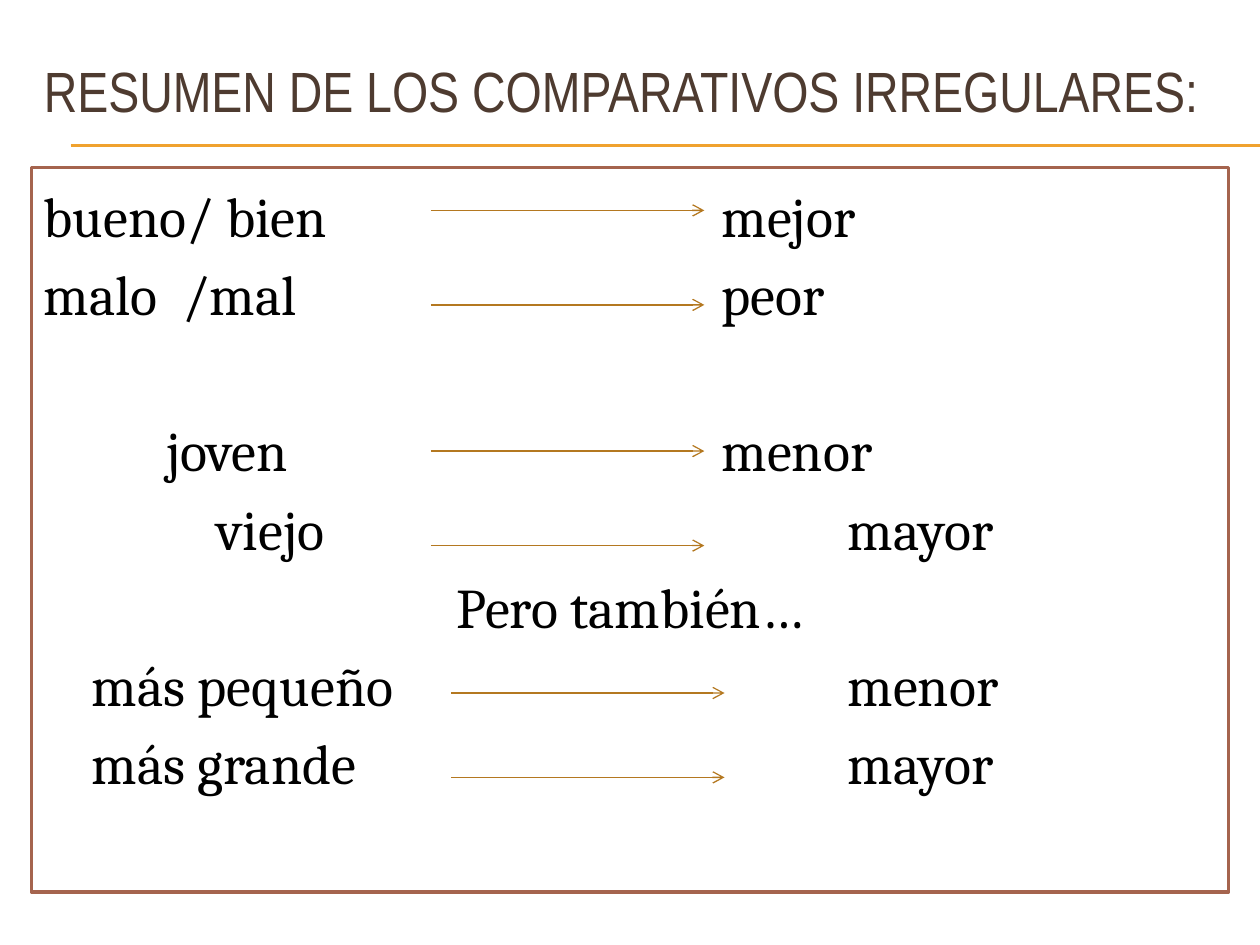
from lxml import etree
from pptx import Presentation
from pptx import util as u
from pptx.dml.color import RGBColor
from pptx.enum import shapes, text
from pptx.oxml.ns import qn

# Content
TITLE = "RESUMEN DE LOS COMPARATIVOS IRREGULARES:"
NOTE = "Pero también…"
# adjective, comparative, adjective tab, comparative tab, arrow start, arrow y
PAIRS = [
    ("bueno/ bien", "mejor", 0, 5.38, 3.42, 1.67),
    ("malo  /mal", "peor", 0, 5.38, 3.42, 2.42),
    ("joven", "menor", 0.97, 5.38, 3.42, 3.58),
    ("viejo", "mayor", 1.37, 6.38, 3.42, 4.33),
    ("más pequeño", "menor", 0.38, 6.38, 3.58, 5.5),
    ("más grande", "mayor", 0.38, 6.38, 3.58, 6.17),
]
GROUP_START, NOTE_AFTER = 2, 3

BROWN = RGBColor(0x4E, 0x3B, 0x30)
BLACK = RGBColor(0, 0, 0)
WHITE = RGBColor(255, 255, 255)
RUST = RGBColor(0xA5, 0x64, 0x4E)
GOLD = RGBColor(0xF0, 0xA2, 0x2E)
OCHRE = RGBColor(0xB4, 0x78, 0x20)
MARGIN, ARROW_LENGTH, PITCH = 0.25, 2.17, u.Pt(44.7)

prs = Presentation()
prs.slide_width, prs.slide_height = u.Inches(10), u.Inches(7.5)
slide = prs.slides.add_slide(prs.slide_layouts[6])


def add_line(left, right, y, color, arrow=False):
    line = slide.shapes.add_connector(
        shapes.MSO_CONNECTOR.STRAIGHT, *map(u.Inches, (left, y, right, y)))
    line.line.color.rgb = color
    line.line.width = u.Pt(0.75)
    if arrow:
        etree.SubElement(line.line._get_or_add_ln(), qn("a:tailEnd"), type="arrow")
    etree.SubElement(line._element.spPr, qn("a:effectLst"))


def set_font(paragraph, name, size, color):
    font = paragraph.font
    font.name, font.size, font.color.rgb = name, u.Pt(size), color


def set_tabs(paragraph, stops):
    props = paragraph._p.get_or_add_pPr()
    tabs = etree.Element(qn("a:tabLst"))
    for stop in stops:
        etree.SubElement(tabs, qn("a:tab"), pos=str(u.Inches(stop)), algn="l")
    props.find(qn("a:defRPr")).addprevious(tabs)


# Double rule under the title
for y in (1.15, 1.16):
    add_line(0.56, 10, y, GOLD)

# Title
title = slide.shapes.add_textbox(*map(u.Inches, (MARGIN, 0.25, 10 - 2 * MARGIN, 0.92)))
title.text_frame.word_wrap = True
title.text_frame.vertical_anchor = text.MSO_ANCHOR.MIDDLE
heading = title.text_frame.paragraphs[0]
heading.text = TITLE
set_font(heading, "Arial Narrow", 32.4, BROWN)

# Framed list of comparatives
frame = slide.shapes.add_shape(
    shapes.MSO_SHAPE.RECTANGLE, *map(u.Inches, (MARGIN, 1.33, 10 - 2 * MARGIN, 5.75)))
frame.shadow.inherit = False
frame.fill.solid()
frame.fill.fore_color.rgb = WHITE
frame.line.color.rgb = RUST
frame.line.width = u.Pt(2)
body = frame.text_frame
body.word_wrap = True
body.vertical_anchor = text.MSO_ANCHOR.TOP
body.margin_top = u.Inches(0.02)


def add_row(words, align=text.PP_ALIGN.LEFT):
    row = body.paragraphs[0] if not body.text else body.add_paragraph()
    row.text = words
    row.alignment = align
    row.line_spacing = PITCH
    set_font(row, "Cambria", 32, BLACK)
    return row


for i, (adjective, comparative, start, answer, _, _) in enumerate(PAIRS):
    row = add_row(("\t" if start else "") + f"{adjective}\t{comparative}")
    if i == GROUP_START:
        row.space_before = PITCH
    set_tabs(row, [stop for stop in (start, answer) if stop])
    if i == NOTE_AFTER:
        add_row(NOTE, text.PP_ALIGN.CENTER)

# Arrows from adjective to comparative
for *_, left, y in PAIRS:
    add_line(left, left + ARROW_LENGTH, y, OCHRE, arrow=True)

prs.save("out.pptx")
